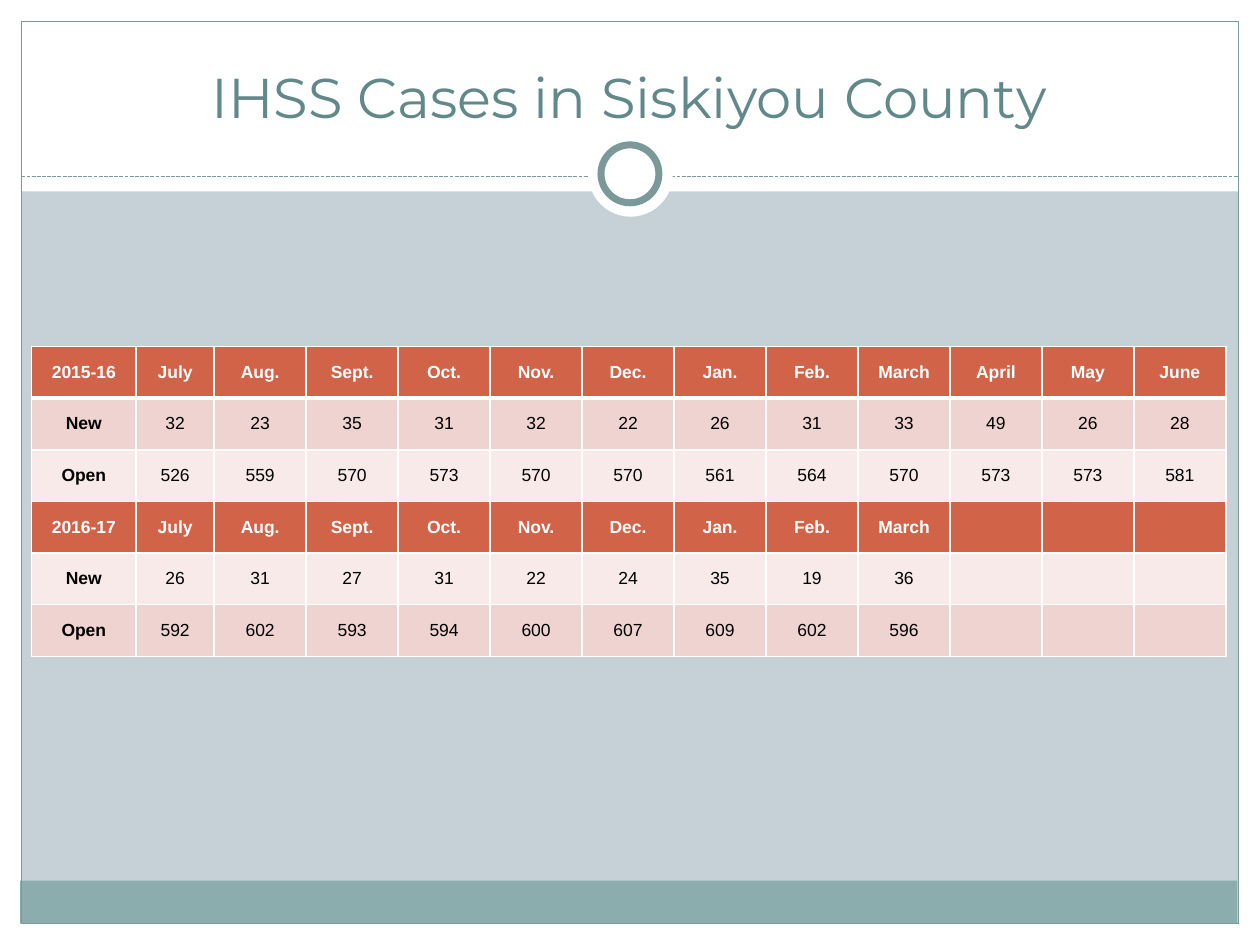
"""Build the slide of monthly IHSS cases in Siskiyou County."""
from lxml import etree
from pptx import Presentation
from pptx.dml.color import RGBColor
from pptx.enum import dml, shapes, text
from pptx.oxml import ns
from pptx.util import Inches, Pt

COLORS = {
    "background": "C5D1D7", "white": "FFFFFF", "footer": "8CADAE",
    "frame": "7C999A", "title": "61898A", "header": "D16349",
    "dark_band": "EED3D0", "light_band": "F7EAE9", "black": "000000",
}
MONTHS = ["July", "Aug.", "Sept.", "Oct.", "Nov.", "Dec.", "Jan.", "Feb.",
          "March", "April", "May", "June"]
CASES = [
    ("header", ["2015-16", *MONTHS]),
    ("dark_band", ["New", 32, 23, 35, 31, 32, 22, 26, 31, 33, 49, 26, 28]),
    ("light_band", ["Open", 526, 559, 570, 573, 570, 570, 561, 564, 570, 573, 573, 581]),
    ("header", ["2016-17", *MONTHS[:9]]),
    ("light_band", ["New", 26, 31, 27, 31, 22, 24, 35, 19, 36]),
    ("dark_band", ["Open", 592, 602, 593, 594, 600, 607, 609, 602, 596]),
]
COLUMN_WIDTHS = [0.83, 0.62] + [0.73] * 11
ROW_HEIGHT = 0.41


def rgb(name):
    return RGBColor.from_string(COLORS[name])


def style_font(paragraph, family, size, color, bold=False):
    font = paragraph.font
    font.name, font.size, font.bold = family, Pt(size), bold
    font.color.rgb = rgb(color)


def add_panel(slide, bounds, fill=None, line=None, weight=0.75,
              preset=shapes.MSO_SHAPE.RECTANGLE):
    panel = slide.shapes.add_shape(preset, *map(Inches, bounds))
    panel.shadow.inherit = False
    if fill:
        panel.fill.solid()
        panel.fill.fore_color.rgb = rgb(fill)
    else:
        panel.fill.background()
    if line:
        panel.line.color.rgb = rgb(line)
        panel.line.width = Pt(weight)
    else:
        panel.line.fill.background()


def add_divider(slide, left, right, y):
    divider = slide.shapes.add_connector(
        shapes.MSO_CONNECTOR.STRAIGHT, *map(Inches, (left, y, right, y)))
    divider.line.color.rgb = rgb("frame")
    divider.line.width = Pt(0.75)
    divider.line.dash_style = dml.MSO_LINE.SQUARE_DOT
    etree.SubElement(divider.element.spPr, ns.qn("a:effectLst"))


def add_backdrop(slide):
    slide.background.fill.solid()
    slide.background.fill.fore_color.rgb = rgb("background")
    for margin in [(0, 7.33, 10, 0.17), (0, 0, 10, 1.52),
                   (0, 0, 0.17, 7.5), (9.83, 0, 0.17, 7.5)]:
        add_panel(slide, margin, "white")
    add_panel(slide, (0.16, 6.99, 9.66, 0.34), "footer")
    add_panel(slide, (0.17, 0.17, 9.66, 7.16), line="frame")
    add_divider(slide, 0.17, 9.83, 1.4)
    oval = shapes.MSO_SHAPE.OVAL
    add_panel(slide, (4.67, 1.05, 0.67, 0.67), "white", preset=oval)
    add_panel(slide, (4.77, 1.15, 0.46, 0.46), "white", "frame", 4, oval)


def set_title(slide, wording):
    title = slide.shapes.title
    slide.shapes.element.append(title.element)
    title.left, title.top, title.width, title.height = map(
        Inches, (0.33, 0.25, 9.33, 0.83))
    title.text_frame.text = wording
    title.text_frame.vertical_anchor = text.MSO_ANCHOR.BOTTOM
    heading = title.text_frame.paragraphs[0]
    heading.alignment = text.PP_ALIGN.CENTER
    style_font(heading, "Montserrat", 32, "title")


def set_borders(cell, top, bottom):
    properties = cell._tc.get_or_add_tcPr()
    for side, weight in zip("LRTB", (1, 1, top, bottom)):
        border = etree.SubElement(properties, ns.qn(f"a:ln{side}"), w=str(Pt(weight)))
        fill = etree.SubElement(border, ns.qn("a:solidFill"))
        etree.SubElement(fill, ns.qn("a:srgbClr"), val=COLORS["white"])


def add_case_table(slide):
    table = slide.shapes.add_table(
        len(CASES), len(COLUMN_WIDTHS), Inches(0.25), Inches(2.75),
        Inches(sum(COLUMN_WIDTHS)), Inches(ROW_HEIGHT * len(CASES))).table
    for column, width in zip(table.columns, COLUMN_WIDTHS):
        column.width = Inches(width)
    for r, (band, values) in enumerate(CASES):
        table.rows[r].height = Inches(ROW_HEIGHT)
        is_header = band == "header"
        for c in range(len(COLUMN_WIDTHS)):
            cell = table.cell(r, c)
            set_borders(cell, 3 if r == 1 else 1, 3 if r == 0 else 1)
            cell.fill.solid()
            cell.fill.fore_color.rgb = rgb(band)
            cell.vertical_anchor = text.MSO_ANCHOR.MIDDLE
            if c < len(values):
                cell.text = str(values[c])
            entry = cell.text_frame.paragraphs[0]
            entry.alignment = text.PP_ALIGN.CENTER
            style_font(entry, "Arial", 10, "white" if is_header else "black",
                       is_header or c == 0)


def main():
    deck = Presentation()
    deck.slide_width, deck.slide_height = Inches(10), Inches(7.5)
    slide = deck.slides.add_slide(deck.slide_layouts[5])
    add_backdrop(slide)
    set_title(slide, "IHSS Cases in Siskiyou County")
    add_case_table(slide)
    deck.save("out.pptx")


if __name__ == "__main__":
    main()
